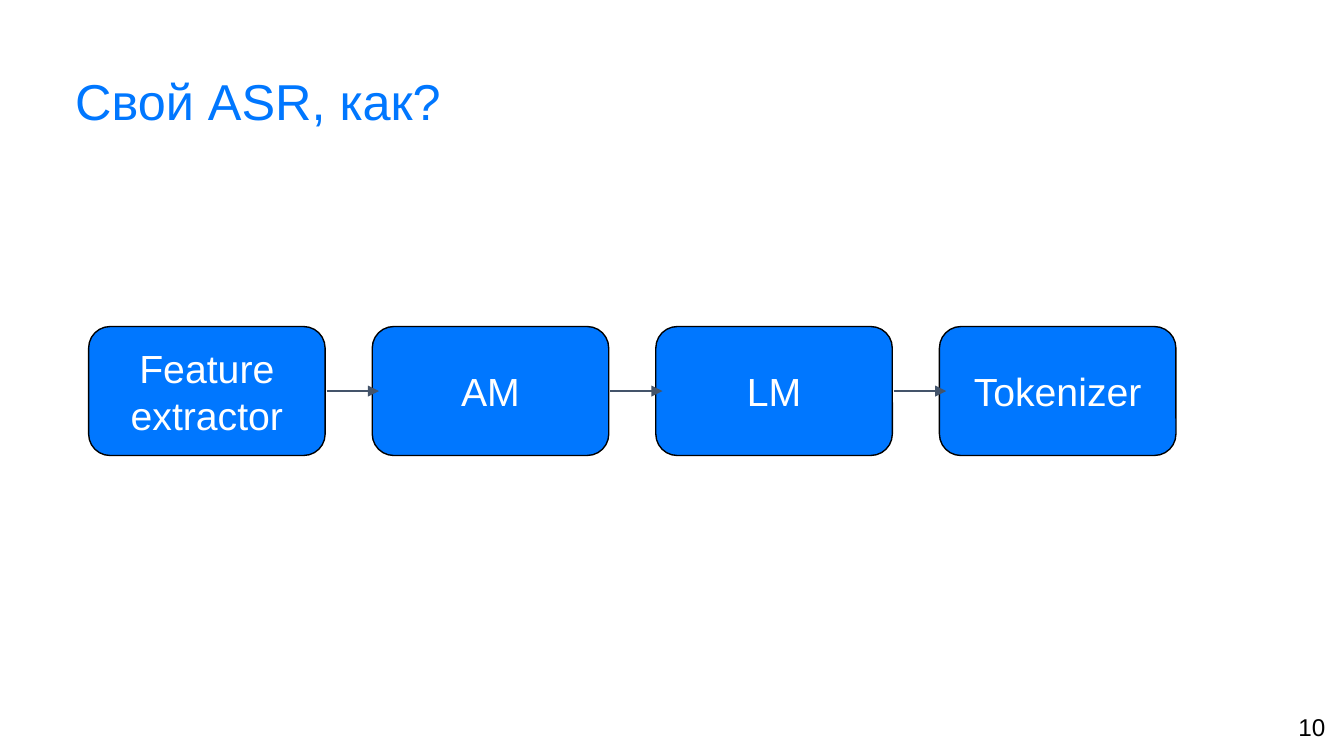
from lxml.etree import SubElement
from pptx import Presentation
from pptx.dml.color import RGBColor
from pptx.enum.shapes import MSO_CONNECTOR as CONN, MSO_SHAPE as SHAPE
from pptx.enum.text import MSO_ANCHOR as ANCHOR, PP_ALIGN as ALIGN
from pptx.oxml.ns import qn
from pptx.util import Inches, Pt

BLUE = RGBColor(0x00, 0x77, 0xFF)
SLATE = RGBColor(0x44, 0x54, 0x6A)
BLACK = RGBColor(0x00, 0x00, 0x00)
WHITE = RGBColor(0xFF, 0xFF, 0xFF)

STAGES = ["Feature extractor", "AM", "LM", "Tokenizer"]
LEFT, TOP, WIDTH, HEIGHT = 0.66, 2.43, 1.76, 0.96
STEP = 2.11
ARROW_LENGTH = 0.39


def write(sp, text, size, color, font="Arial", align=ALIGN.LEFT,
          anchor=ANCHOR.MIDDLE, inset=0.1, spacing=None):
    tf = sp.text_frame
    tf.word_wrap = True
    tf.vertical_anchor = anchor
    tf.margin_left = tf.margin_right = Inches(inset)
    tf.margin_top = tf.margin_bottom = Inches(inset)
    p = tf.paragraphs[0]
    p.alignment = align
    p.line_spacing = spacing
    r = p.add_run()
    r.text = text
    r.font.name = font
    r.font.size = Pt(size)
    r.font.color.rgb = color


class SlideBuilder:
    def __init__(self, slide, line_width=0.75):
        self.slide = slide
        self.line_width = Pt(line_width)

    def title(self, text, x, y, w, h):
        sp = self.slide.shapes.title
        sp.left, sp.top, sp.width, sp.height = map(Inches, (x, y, w, h))
        write(sp, text, 27, BLUE, anchor=ANCHOR.TOP, inset=0, spacing=0.9)

    def box(self, text, x, y, w, h):
        sp = self.slide.shapes.add_shape(
            SHAPE.ROUNDED_RECTANGLE, *map(Inches, (x, y, w, h)))
        sp.shadow.inherit = False
        sp.fill.solid()
        sp.fill.fore_color.rgb = BLUE
        sp.line.color.rgb = BLACK
        sp.line.width = self.line_width
        write(sp, text, 21, WHITE, align=ALIGN.CENTER)

    def arrow(self, x, y, length):
        sp = self.slide.shapes.add_connector(
            CONN.STRAIGHT, *map(Inches, (x, y, x + length, y)))
        sp.line.color.rgb = SLATE
        sp.line.width = self.line_width
        SubElement(sp.line._get_or_add_ln(), qn("a:tailEnd"), type="triangle")
        SubElement(sp._element.spPr, qn("a:effectLst"))

    def page_number(self, text, x, y, w, h):
        sp = self.slide.shapes.add_textbox(*map(Inches, (x, y, w, h)))
        write(sp, text, 13, BLACK, align=ALIGN.RIGHT)


def main():
    # Widescreen 16:9 page
    prs = Presentation()
    prs.slide_width = Inches(10)
    prs.slide_height = Inches(10 * 9 / 16)
    builder = SlideBuilder(prs.slides.add_slide(prs.slide_layouts[5]))

    builder.title("Свой ASR, как?", 0.56, 0.57, 8.9, 0.53)

    # Pipeline stages
    for i, stage in enumerate(STAGES):
        builder.box(stage, LEFT + i * STEP, TOP, WIDTH, HEIGHT)

    # Arrows between neighbouring stages
    for i in range(len(STAGES) - 1):
        builder.arrow(LEFT + WIDTH + 0.01 + i * STEP, TOP + HEIGHT / 2, ARROW_LENGTH)

    builder.page_number("10", 9.36, 5.19, 0.6, 0.43)
    prs.save("out.pptx")


if __name__ == "__main__":
    main()
